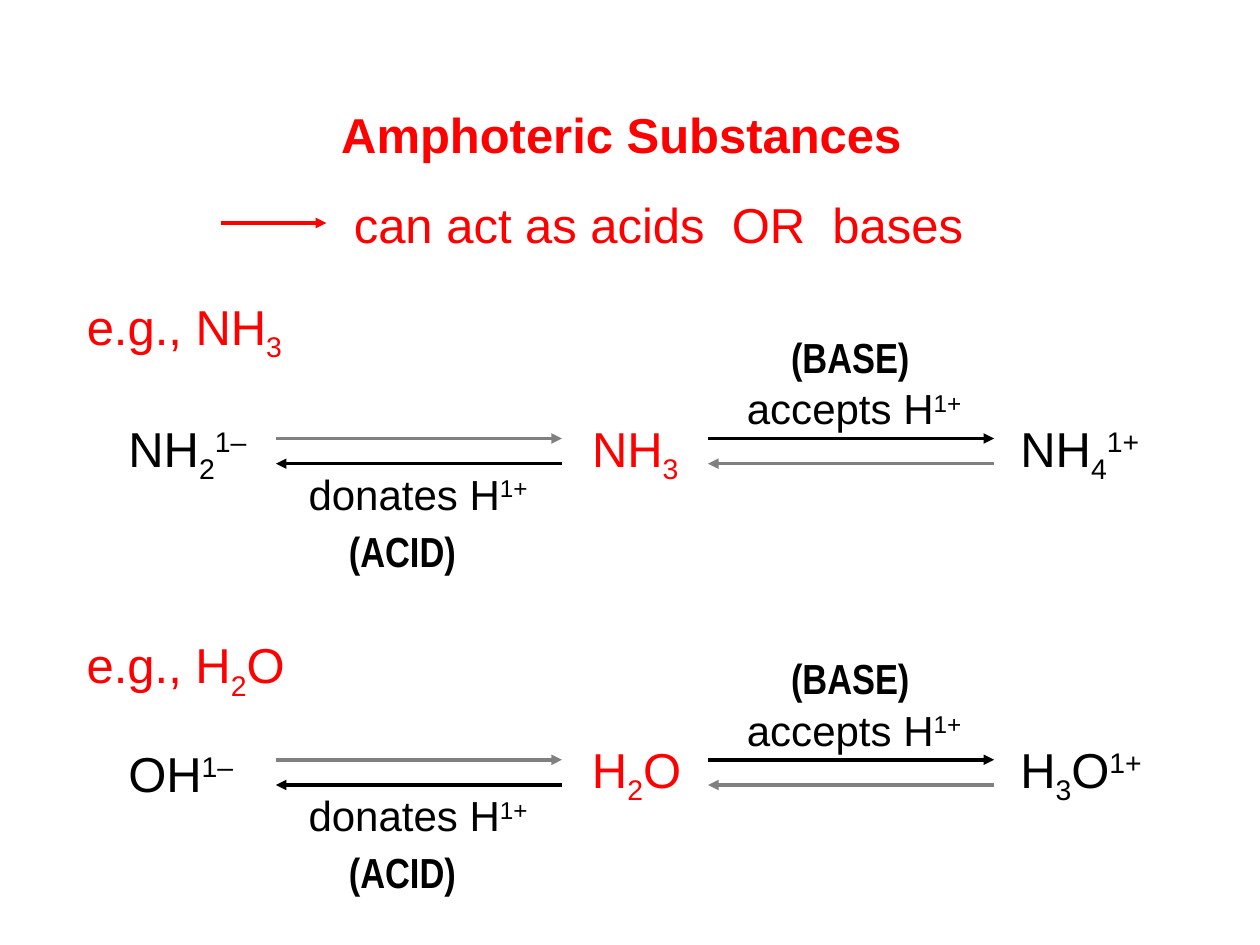
import pptx
import pptx.dml.color
import pptx.enum.shapes
import pptx.enum.text
import pptx.util
from lxml import etree
from pptx.oxml.ns import qn
from pptx.util import Inches

COLORS = {"red": "FF0000", "black": "000000", "gray": "808080"}
SUB, SUPER = -25000, 30000
MIDDLE = pptx.enum.text.MSO_ANCHOR.MIDDLE
TOP = pptx.enum.text.MSO_ANCHOR.TOP


def rgb(name):
    return pptx.dml.color.RGBColor.from_string(COLORS[name])


def add_text(page, left, top, width, height, spans, color="black", size=28,
             bold=False, face="Arial", anchor=MIDDLE):
    """Add one line of text; each span is a string or (string, baseline)."""
    box = page.shapes.add_textbox(Inches(left), Inches(top), Inches(width), Inches(height))
    frame = box.text_frame
    frame.word_wrap = False
    frame.auto_size = pptx.enum.text.MSO_AUTO_SIZE.SHAPE_TO_FIT_TEXT
    frame.vertical_anchor = anchor
    para = frame.paragraphs[0]
    para.font.name = face
    para.font.size = pptx.util.Pt(size)
    para.font.bold = bold
    para.font.color.rgb = rgb(color)
    for part in spans:
        text, baseline = (part, 0) if isinstance(part, str) else part
        span = para.add_run()
        span.text = text
        if baseline:
            span._r.get_or_add_rPr().set("baseline", str(baseline))


def add_arrow(page, start, end, y, color):
    """Add a horizontal arrow whose head is at end."""
    arrow = page.shapes.add_connector(
        pptx.enum.shapes.MSO_CONNECTOR.STRAIGHT,
        Inches(start), Inches(y), Inches(end), Inches(y))
    arrow.line.color.rgb = rgb(color)
    arrow.line.width = pptx.util.Pt(2)
    etree.SubElement(arrow.line._get_or_add_ln(), qn("a:tailEnd"), type="triangle")
    etree.SubElement(arrow._element.spPr, qn("a:effectLst"))


def add_heading(page, left, top):
    add_text(page, left + 0.86, top, 4.88, 0.57, ["Amphoteric Substances"], "red", bold=True)
    add_arrow(page, left, left + 0.84, top + 0.99, "red")
    add_text(page, left + 0.96, top + 0.71, 5.15, 0.57, ["can act as acids  OR  bases"], "red")


def add_equilibrium(page, left, top, forward, backward):
    """Add a pair of opposite arrows."""
    right = left + 2.27
    add_arrow(page, left, right, top, forward)
    add_arrow(page, right, left, top + 0.2, backward)


def add_reaction(page, left, top, species):
    # Base form, amphoteric substance, acid form
    for offset, color, (width, spans) in zip((0, 3.68, 7.08), ("black", "red", "black"), species):
        add_text(page, left + offset, top + 0.72, width, 0.57, spans, color)

    # Arrows between the species
    add_equilibrium(page, left + 1.27, top + 0.9, "gray", "black")
    add_equilibrium(page, left + 4.7, top + 0.9, "black", "gray")

    # Action and role beside each black arrow
    for x, y, width, action in ((4.91, 0.41, 1.94, "accepts H"), (1.43, 1.09, 1.98, "donates H")):
        add_text(page, left + x, top + y, width, 0.5, [action, ("1+", SUPER)],
                 size=24, anchor=TOP)
    for x, y, width, role in ((5.26, 0, 1.14, "(BASE)"), (1.75, 1.54, 1.05, "(ACID)")):
        add_text(page, left + x, top + y, width, 0.5, [role],
                 size=24, bold=True, face="Arial Narrow", anchor=TOP)


def main():
    deck = pptx.Presentation()
    deck.slide_width, deck.slide_height = Inches(10), Inches(7.5)
    page = deck.slides.add_slide(deck.slide_layouts[6])

    add_heading(page, 1.75, 0.78)

    # Ammonia example
    ammonia = ["NH", ("3", SUB)]
    add_text(page, 0.59, 2.33, 1.88, 0.57, ["e.g., ", *ammonia], "red")
    add_reaction(page, 0.92, 2.58, (
        (1.21, ["NH", ("2", SUB), ("1–", SUPER)]),
        (0.91, ammonia),
        (1.21, ["NH", ("4", SUB), ("1+", SUPER)])))

    # Water example
    water = ["H", ("2", SUB), "O"]
    add_text(page, 0.59, 5.02, 1.9, 0.57, ["e.g., ", *water], "red")
    add_reaction(page, 0.92, 5.13, (
        (1.08, ["OH", ("1–", SUPER)]),
        (0.93, water),
        (1.23, ["H", ("3", SUB), "O", ("1+", SUPER)])))

    deck.save("out.pptx")


if __name__ == "__main__":
    main()
